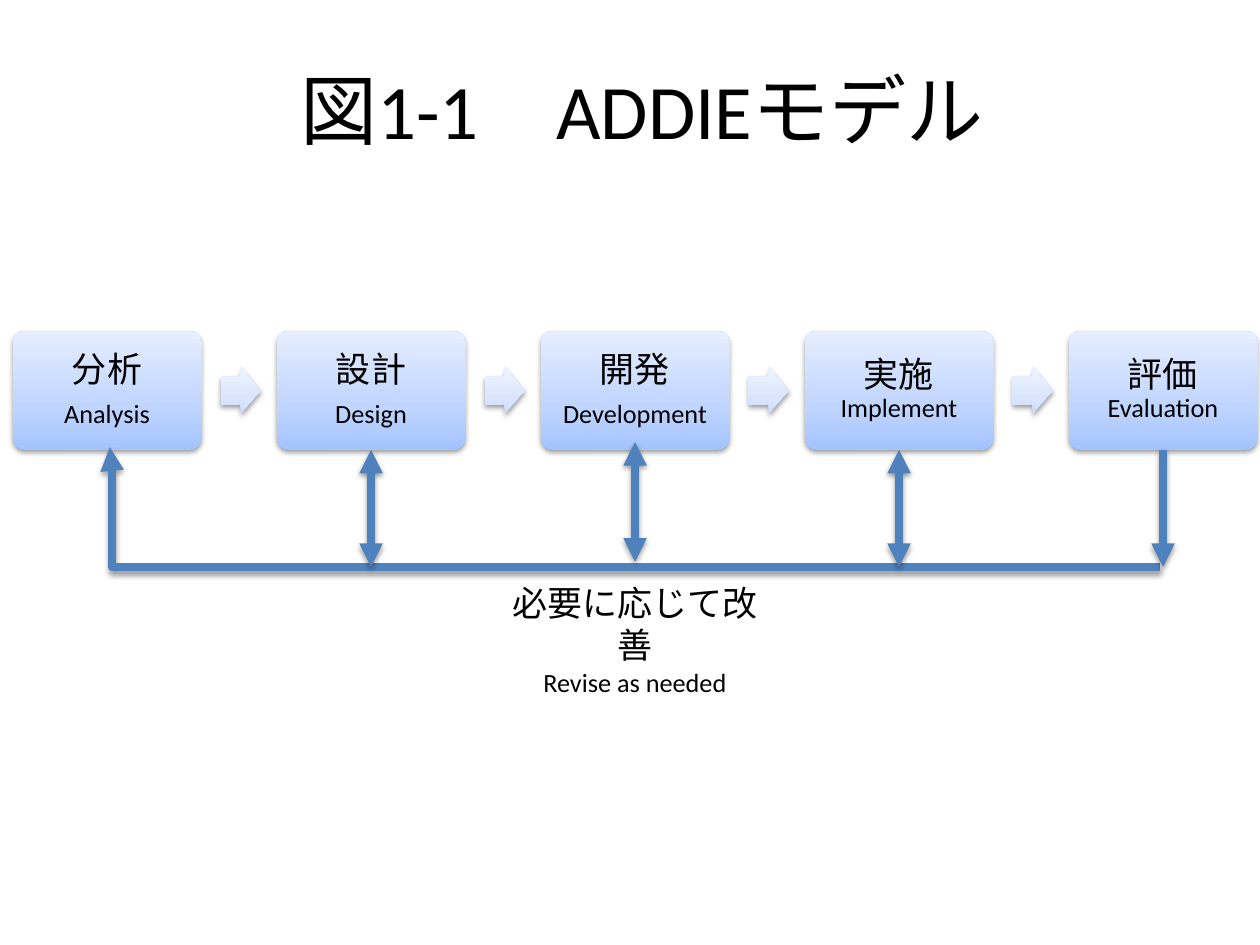
"""Build the ADDIE model slide: five stages joined to a feedback line."""
from copy import deepcopy

from lxml.etree import SubElement
from pptx import Presentation
from pptx.dml.color import RGBColor
from pptx.enum.shapes import MSO_CONNECTOR as Connector, MSO_SHAPE as Shape
from pptx.enum.text import MSO_ANCHOR as Anchor, PP_ALIGN as Align
from pptx.oxml.ns import qn
from pptx.util import Pt

TITLE = "図1-1　ADDIEモデル"
STAGES = [
    ("分析", "Analysis", "paragraphs"),
    ("設計", "Design", "paragraphs"),
    ("開発", "Development", "paragraphs"),
    ("実施", "Implement", "lines"),
    ("評価", "Evaluation", "lines"),
]
CAPTION = ("必要に応じて改善", "Revise as needed")
FEEDBACK = [
    {"stage": 4, "ends": ["tailEnd"], "lift": 0},
    {"stage": 3, "ends": ["headEnd", "tailEnd"], "lift": 0},
    {"stage": 2, "ends": ["headEnd", "tailEnd"], "lift": 3},
    {"stage": 1, "ends": ["headEnd", "tailEnd"], "lift": 0},
]
BOX_GRADIENT = [(0, "A4C4FF"), (0.35, "BFD4FF"), (1, "E6EEFF")]
ARROW_GRADIENT = [(0, "CDDDFE"), (0.35, "DBE6FE"), (1, "F0F5FF")]
LINE_COLOR, TEXT_COLOR = "4F81BD", "000000"
LARGE, SMALL = 20, 15

LEFT, TOP, WIDTH, HEIGHT, PITCH = 7.2, 189.4, 108, 67.6, 150.85
ARROW_OFFSET, ARROW_WIDTH, ARROW_HEIGHT = 118.8, 23, 26.8
ARROW_TOP = TOP + (HEIGHT - ARROW_HEIGHT) / 2
LINE_TOP, LINE_BOTTOM = 255.6, 324
RETURN_RIGHT, RETURN_LEFT, RETURN_BEND = 663, 62.8, 99800


def color(value):
    return RGBColor.from_string(value)


def apply(target, values):
    for name, value in values.items():
        setattr(target, name, value)


def add_shadow(shape):
    properties = shape._element.spPr
    for old in properties.findall(qn("a:effectLst")):
        properties.remove(old)
    effects = SubElement(properties, qn("a:effectLst"))
    shadow = SubElement(effects, qn("a:outerShdw"), blurRad=str(Pt(3.1)), dist=str(Pt(1.6)),
                        dir="5400000", rotWithShape="0")
    black = SubElement(shadow, qn("a:srgbClr"), val="000000")
    SubElement(black, qn("a:alpha"), val="38000")


def add_gradient_shape(slide, kind, box, adjustments, gradient):
    shape = slide.shapes.add_shape(kind, *map(Pt, box))
    for index, value in enumerate(adjustments):
        shape.adjustments[index] = value
    shape.line.fill.background()
    shape.fill.gradient()
    shape.fill.gradient_angle = 90
    stops = shape._element.spPr.find(qn("a:gradFill")).find(qn("a:gsLst"))
    stops.insert(1, deepcopy(stops[0]))
    for stop, (position, value) in zip(shape.fill.gradient_stops, gradient):
        stop.position = position
        stop.color.rgb = color(value)
    add_shadow(shape)
    return shape


def add_run(paragraph, text, size):
    run = paragraph.add_run()
    run.text = text
    apply(run.font, {"name": "Calibri", "size": Pt(size)})
    run.font.color.rgb = color(TEXT_COLOR)


def write(frame, paragraphs, **formats):
    frame.word_wrap = True
    for index, runs in enumerate(paragraphs):
        paragraph = frame.add_paragraph() if index else frame.paragraphs[0]
        apply(paragraph, {"alignment": Align.CENTER, **formats})
        for number, (text, size) in enumerate(runs):
            if number:
                paragraph.add_line_break()
            add_run(paragraph, text, size)


def add_stage(slide, index, japanese, english, layout):
    box = (LEFT + index * PITCH, TOP, WIDTH, HEIGHT)
    shape = add_gradient_shape(slide, Shape.ROUNDED_RECTANGLE, box, [0.1], BOX_GRADIENT)
    margins = dict.fromkeys(["margin_left", "margin_right", "margin_top", "margin_bottom"], Pt(7.6))
    apply(shape.text_frame, {"vertical_anchor": Anchor.MIDDLE, **margins})
    runs = [(japanese, LARGE), (english, SMALL)]
    paragraphs = [runs] if layout == "lines" else [[run] for run in runs]
    write(shape.text_frame, paragraphs, line_spacing=0.9, space_after=Pt(6))
    return shape


def add_line(slide, kind, points, ends):
    line = slide.shapes.add_connector(kind, *map(Pt, points))
    line.line.color.rgb = color(LINE_COLOR)
    line.line.width = Pt(4.5)
    for end in ends:
        SubElement(line.line._get_or_add_ln(), qn(f"a:{end}"), type="triangle")
    add_shadow(line)
    return line


def add_text(slide, box, paragraphs, anchor):
    frame = slide.shapes.add_textbox(*map(Pt, box)).text_frame
    frame.vertical_anchor = anchor
    write(frame, paragraphs)


def main():
    presentation = Presentation()
    apply(presentation, {"slide_width": Pt(720), "slide_height": Pt(540)})
    slide = presentation.slides.add_slide(presentation.slide_layouts[6])

    stages = []
    for index, stage in enumerate(STAGES):
        stages.append(add_stage(slide, index, *stage))
        if index < len(STAGES) - 1:
            box = (LEFT + index * PITCH + ARROW_OFFSET, ARROW_TOP, ARROW_WIDTH, ARROW_HEIGHT)
            add_gradient_shape(slide, Shape.RIGHT_ARROW, box, [0.6, 0.5], ARROW_GRADIENT)

    points = (RETURN_RIGHT, LINE_BOTTOM, RETURN_LEFT, LINE_TOP)
    return_line = add_line(slide, Connector.ELBOW, points, ["tailEnd"])
    geometry = return_line._element.spPr.find(qn("a:prstGeom"))
    guides = geometry.find(qn("a:avLst"))
    SubElement(guides, qn("a:gd"), name="adj1", fmla=f"val {RETURN_BEND}")

    for feedback in FEEDBACK:
        index, lift = feedback["stage"], feedback["lift"]
        center = LEFT + index * PITCH + WIDTH / 2
        points = (center, LINE_TOP - lift, center, LINE_BOTTOM - lift)
        line = add_line(slide, Connector.STRAIGHT, points, feedback["ends"])
        if not lift:
            line.begin_connect(stages[index], 2)

    caption = [[run] for run in zip(CAPTION, (LARGE, SMALL))]
    add_text(slide, (278.6, 329, 168.5, 49.7), caption, Anchor.TOP)
    add_text(slide, (77.8, 4.3, 578.2, 116), [[(TITLE, 44)]], Anchor.MIDDLE)
    presentation.save("out.pptx")


if __name__ == "__main__":
    main()
